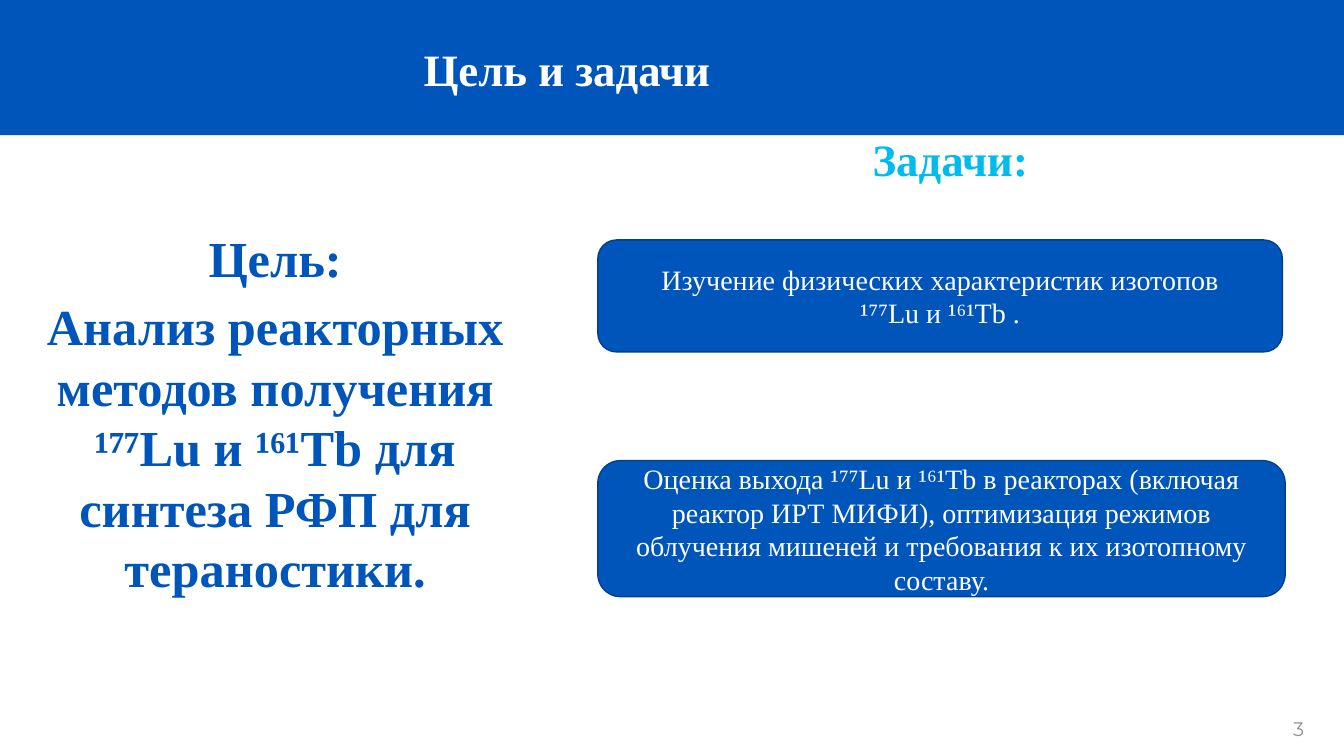
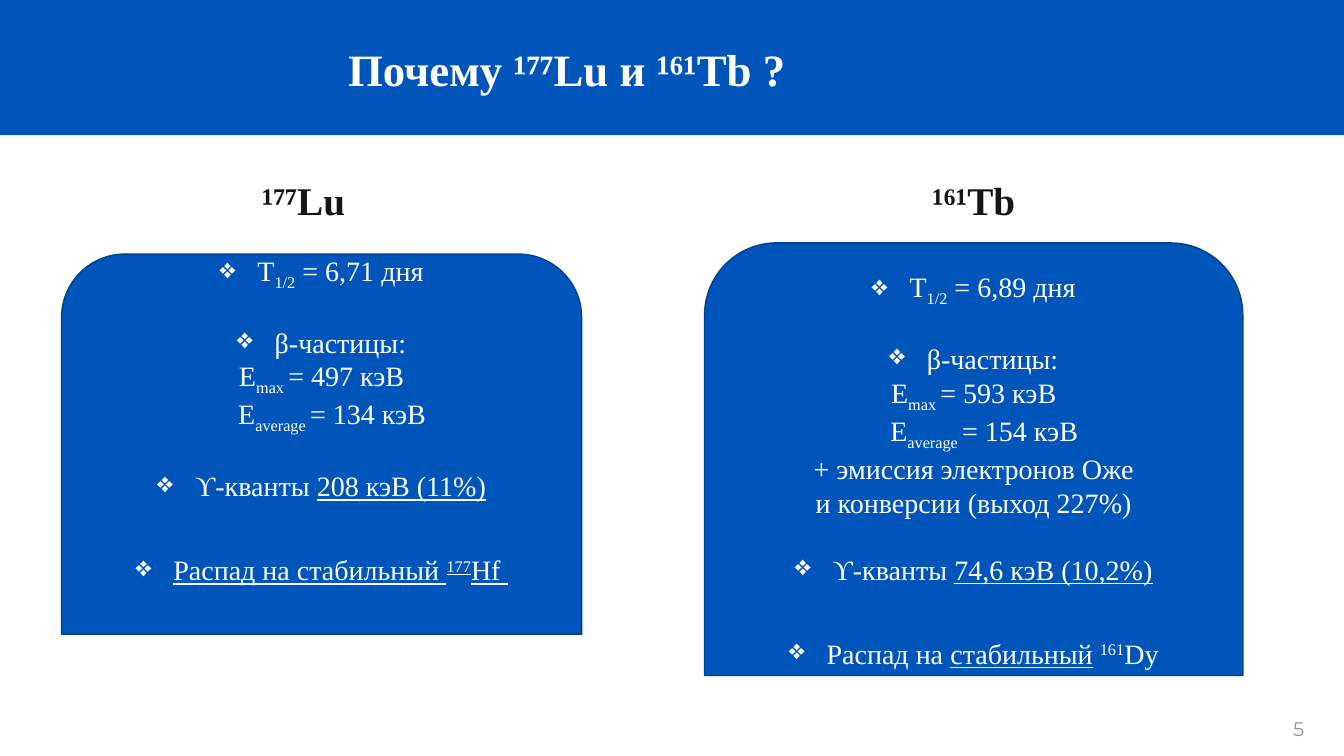
import pptx
import pptx.util
import pptx.dml.color
import pptx.enum.shapes
import pptx.enum.text
import pptx.oxml.ns
import lxml.etree

Pt = pptx.util.Pt
SHAPE = pptx.enum.shapes.MSO_SHAPE
ALIGN = pptx.enum.text.PP_ALIGN
ANCHOR = pptx.enum.text.MSO_ANCHOR
qn = pptx.oxml.ns.qn

BLUE, EDGE, CYAN = "0055BB", "00408C", "00BBEE"
WHITE, INK, GREY = "FFFFFF", "171616", "8F9092"
SERIF, SANS = "Times New Roman", "Montserrat"
BULLET_INDENT = 27
BASELINE = {"sub": "-25000", "sup": "30000"}

GOAL = [
    {"runs": [("Цель:", "")], "after": 6},
    {"runs": [("Анализ реакторных методов получения ¹⁷⁷Lu и ¹⁶¹Tb "
               "для синтеза РФП для тераностики.", "")], "after": 6},
]
TASKS = [
    ((427, 171.4, 489, 80), [
        {"runs": [("Изучение физических характеристик изотопов", "")]},
        {"runs": [("¹⁷⁷Lu и ¹⁶¹Tb .", "")]},
    ]),
    ((427, 329, 491, 97.2), [
        {"runs": [("Оценка выхода ¹⁷⁷Lu и ¹⁶¹Tb в реакторах (включая реактор ИРТ МИФИ), "
                   "оптимизация режимов облучения мишеней и требования "
                   "к их изотопному составу.", "")]},
    ]),
]
ISOTOPES = [
    {
        "name": "¹⁷⁷Lu", "heading": (57, 122.4, 319.7, 41),
        "panel": (44, 181.5, 371.5, 271.5), "bottom": 51.6,
        "half_life": "6,71", "e_max": "497", "e_average": "134",
        "extra": [], "gamma": "208 кэВ (11%)",
        "decay": [("Распад на стабильный ", "u"), ("177", "u sup"), ("Hf ", "u")],
    },
    {
        "name": "¹⁶¹Tb", "heading": (535.7, 122.4, 319.7, 41),
        "panel": (503.3, 173.5, 384.5, 309), "bottom": 3.6,
        "half_life": "6,89", "e_max": "593", "e_average": "154",
        "extra": ["+ эмиссия электронов Оже", "и конверсии (выход 227%)"],
        "gamma": "74,6 кэВ (10,2%)",
        "decay": [("Распад на ", ""), ("стабильный", "u"), (" ", ""),
                  ("161", "sup"), ("Dy", "")],
    },
]


def rgb(value):
    return pptx.dml.color.RGBColor.from_string(value)


def place(sp, box):
    sp.left, sp.top, sp.width, sp.height = map(Pt, box)


def write(tf, paragraphs, size, color, bold=False, font=SERIF, align=ALIGN.CENTER):
    for i, item in enumerate(paragraphs):
        p = tf.paragraphs[0] if i == 0 else tf.add_paragraph()
        p.alignment = align
        p.space_before = Pt(item.get("before", 0))
        p.space_after = Pt(item.get("after", 0))
        pPr = p._p.get_or_add_pPr()
        indent = item.get("indent", 0)
        if item.get("bullet"):
            indent = BULLET_INDENT
            pPr.set("indent", str(-Pt(indent)))
            lxml.etree.SubElement(pPr, qn("a:buChar")).set("char", "❖")
        pPr.set("marL", str(Pt(indent)))
        for text, style in item["runs"]:
            r = p.add_run()
            r.text = text
            r.font.name, r.font.size, r.font.bold = font, Pt(size), bold
            r.font.color.rgb = rgb(color)
            for mark in style.split():
                if mark == "u":
                    r.font.underline = True
                else:
                    r._r.get_or_add_rPr().set("baseline", BASELINE[mark])


def add_text(slide, box, paragraphs, size, color, wrap=True, **style):
    sp = slide.shapes.add_textbox(*map(Pt, box))
    sp.text_frame.word_wrap = wrap
    write(sp.text_frame, paragraphs, size, color, **style)


def add_panel(slide, kind, box, paragraphs=(), edge=EDGE, bottom=3.6):
    sp = slide.shapes.add_shape(kind, *map(Pt, box))
    sp.shadow.inherit = False
    sp.fill.solid()
    sp.fill.fore_color.rgb = rgb(BLUE)
    if edge:
        sp.line.color.rgb = rgb(edge)
        sp.line.width = Pt(1)
    else:
        sp.line.fill.background()
    tf = sp.text_frame
    tf.word_wrap = True
    tf.vertical_anchor = ANCHOR.MIDDLE
    tf.margin_bottom = Pt(bottom)
    write(tf, paragraphs, 20, WHITE)
    return sp


def add_slide(prs, title, number):
    slide = prs.slides.add_slide(prs.slide_layouts[5])
    sp = slide.shapes.title
    place(sp, (44, 26, 722, 46))
    tf = sp.text_frame
    tf.word_wrap = True
    tf.auto_size = pptx.enum.text.MSO_AUTO_SIZE.NONE
    tf.vertical_anchor = ANCHOR.MIDDLE
    write(tf, [{"runs": [(title, "")]}], 32, WHITE, bold=True)
    band = add_panel(slide, SHAPE.RECTANGLE, (0, 0, 960, 96.5), edge=None)
    sp.element.addprevious(band.element)
    add_text(slide, (916.5, 508.3, 32.4, 24.5), [{"runs": [(number, "")]}],
             14, GREY, wrap=False, font=SANS, align=ALIGN.LEFT)
    return slide


def isotope_facts(iso):
    facts = [
        {"runs": [("T", ""), ("1/2", "sub"), (f" = {iso['half_life']} дня", "")],
         "bullet": True},
        {"runs": [("β-частицы:", "")], "bullet": True, "before": 24},
        {"runs": [("E", ""), ("max ", "sub"), (f"= {iso['e_max']} кэВ", "")]},
        {"runs": [("E", ""), ("average ", "sub"), (f"= {iso['e_average']} кэВ", "")],
         "indent": 15},
    ]
    facts += [{"runs": [(line, "")]} for line in iso["extra"]]
    facts += [
        {"runs": [("ϒ-кванты ", ""), (iso["gamma"], "u")],
         "bullet": True, "before": 24, "after": 6},
        {"runs": iso["decay"], "bullet": True, "before": 30},
    ]
    return facts


def main():
    prs = pptx.Presentation()
    prs.slide_width, prs.slide_height = Pt(960), Pt(540)

    slide = add_slide(prs, "Цель и задачи", "3")
    add_text(slide, (23.8, 158.4, 345.6, 341.3), GOAL, 36, BLUE, bold=True)
    add_text(slide, (519, 90.7, 319.7, 46), [{"runs": [("Задачи:", "")]}],
             32, CYAN, bold=True)
    for box, paragraphs in TASKS:
        add_panel(slide, SHAPE.FLOWCHART_ALTERNATE_PROCESS, box, paragraphs)

    slide = add_slide(prs, "Почему ¹⁷⁷Lu и ¹⁶¹Tb ?", "5")
    for iso in ISOTOPES:
        add_panel(slide, SHAPE.ROUND_2_SAME_RECTANGLE, iso["panel"],
                  isotope_facts(iso), bottom=iso["bottom"])
        add_text(slide, iso["heading"], [{"runs": [(iso["name"], "")]}],
                 28, INK, bold=True)

    prs.save("out.pptx")


if __name__ == "__main__":
    main()
